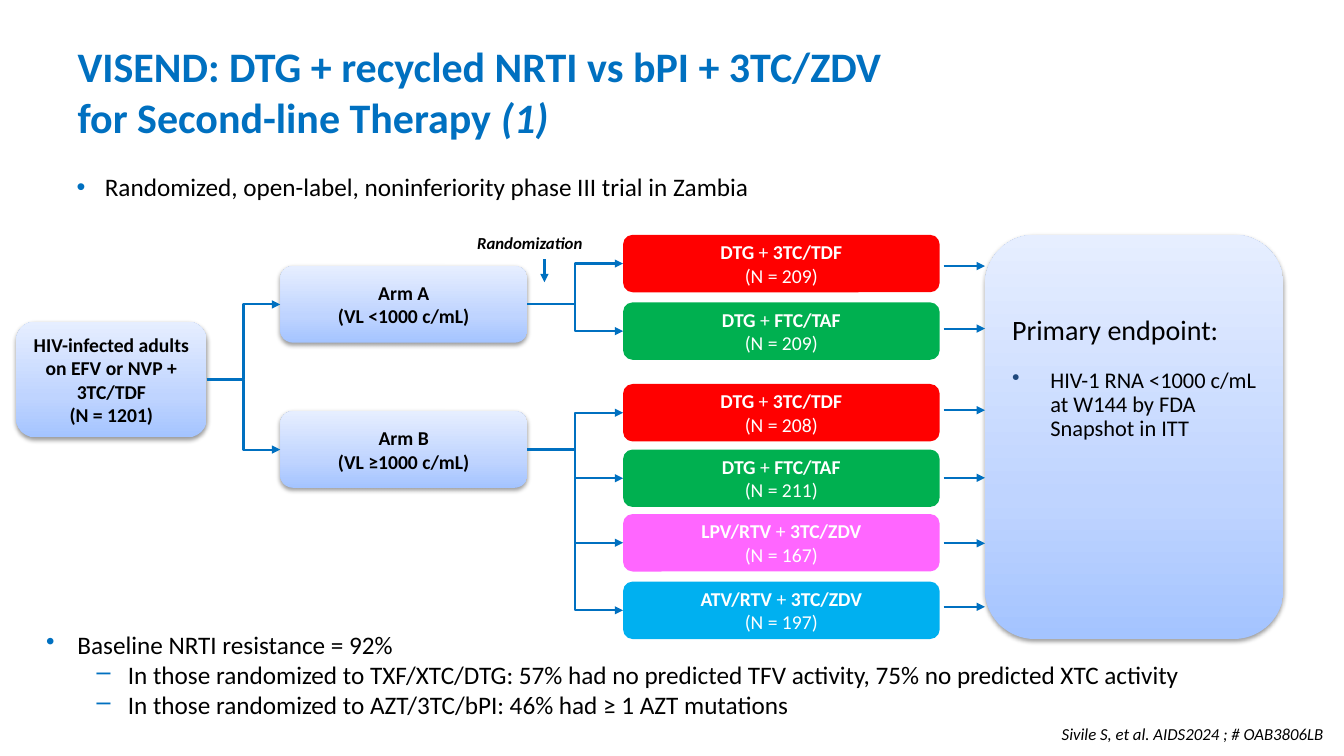
"""Build the VISEND trial design slide."""
import copy

import lxml.etree
import pptx
import pptx.dml.color
import pptx.enum.shapes
import pptx.enum.text
import pptx.oxml.ns
import pptx.util

RGBColor = pptx.dml.color.RGBColor
BLUE = RGBColor(0x00, 0x70, 0xC0)
NAVY = RGBColor(0x1F, 0x49, 0x7D)
BLACK = RGBColor(0x00, 0x00, 0x00)
WHITE = RGBColor(0xFF, 0xFF, 0xFF)
RED = RGBColor(0xFF, 0x00, 0x00)
GREEN = RGBColor(0x00, 0xB0, 0x50)
PINK = RGBColor(0xFF, 0x66, 0xFF)
SKY = RGBColor(0x00, 0xB0, 0xF0)
GRADIENT = [
    (0, RGBColor(0xA4, 0xC4, 0xFF)),
    (0.35, RGBColor(0xBF, 0xD4, 0xFF)),
    (1, RGBColor(0xE6, 0xEE, 0xFF)),
]
SCALE = 9144
LEFT = pptx.enum.text.PP_ALIGN.LEFT
CENTER = pptx.enum.text.PP_ALIGN.CENTER
RIGHT = pptx.enum.text.PP_ALIGN.RIGHT
TOP = pptx.enum.text.MSO_ANCHOR.TOP
MIDDLE = pptx.enum.text.MSO_ANCHOR.MIDDLE
ROUNDED = pptx.enum.shapes.MSO_SHAPE.ROUNDED_RECTANGLE
CONNECTORS = pptx.enum.shapes.MSO_CONNECTOR


def px(length):
    return pptx.util.Emu(length * SCALE)


def add_xml(parent, tag, **attributes):
    return lxml.etree.SubElement(parent, pptx.oxml.ns.qn(tag), attributes)


class TrialSlide:
    """Hold the slide and its style, and draw each kind of element."""

    def __init__(self, deck):
        self.page = deck.slides.add_slide(deck.slide_layouts[1])
        self.font = {"name": "Calibri", "bold": False, "italic": False}

    def set_text(self, box, paragraphs, size, color=BLACK, align=LEFT, anchor=TOP, **style):
        frame = box.text_frame
        settings = {
            "word_wrap": True,
            "auto_size": pptx.enum.text.MSO_AUTO_SIZE.NONE,
            "vertical_anchor": anchor,
        }
        for name, value in settings.items():
            setattr(frame, name, value)
        for index, content in enumerate(paragraphs):
            para = frame.add_paragraph() if index else frame.paragraphs[0]
            if "bullet" in content:
                self.bullet(para, *content["bullet"])
            layout = {"alignment": align, "space_before": pptx.util.Pt(0)}
            for name, value in (layout | content.get("layout", {})).items():
                setattr(para, name, value)
            for text, changes in content["runs"]:
                font = self.font | {"size": pptx.util.Pt(size)} | style | changes
                for number, line in enumerate(text.split("\n")):
                    if number:
                        para.add_line_break()
                    span = para.add_run()
                    span.text = line
                    for name, value in font.items():
                        setattr(span.font, name, value)
                    span.font.color.rgb = color

    def bullet(self, para, mark, color, margin, hanging):
        properties = para._p.get_or_add_pPr()
        properties.set("marL", str(px(margin)))
        properties.set("indent", str(-px(hanging)))
        add_xml(add_xml(properties, "a:buClr"), "a:srgbClr", val=str(color))
        add_xml(properties, "a:buChar", char=mark)

    def placeholder(self, index, place, paragraphs, size, **style):
        box = self.page.placeholders[index]
        for name, value in zip(("left", "top", "width", "height"), place):
            setattr(box, name, px(value))
        self.set_text(box, paragraphs, size, **style)

    def text_box(self, place, paragraphs, size, margins=None, **style):
        box = self.page.shapes.add_textbox(*map(px, place))
        for name, value in (margins or {}).items():
            setattr(box.text_frame, name, px(value))
        self.set_text(box, paragraphs, size, **style)

    def rounded_box(self, place):
        box = self.page.shapes.add_shape(ROUNDED, *map(px, place))
        box.shadow.inherit = False
        box.line.fill.background()
        return box

    def solid_box(self, place, color):
        box = self.rounded_box(place)
        box.fill.solid()
        box.fill.fore_color.rgb = color
        return box

    def gradient_box(self, place):
        box = self.rounded_box(place)
        box.fill.gradient()
        box.fill.gradient_angle = 90
        properties = box._element.spPr
        stops = properties.find(".//" + pptx.oxml.ns.qn("a:gsLst"))
        stops.append(copy.deepcopy(stops[-1]))
        for stop, (position, color) in zip(box.fill.gradient_stops, GRADIENT):
            stop.position = position
            stop.color.rgb = color
        effects = properties.find(pptx.oxml.ns.qn("a:effectLst"))
        shadow = add_xml(effects, "a:outerShdw", blurRad="40000", dist="20000",
                         dir="5400000", rotWithShape="0")
        shade = add_xml(shadow, "a:srgbClr", val=str(BLACK))
        add_xml(shade, "a:alpha", val="38000")
        return box

    def arrow(self, kind, *ends):
        connector = self.page.shapes.add_connector(kind, *ends)
        connector.line.color.rgb = BLUE
        connector.line.width = pptx.util.Pt(1.5)
        properties = connector._element.spPr
        add_xml(properties.find(pptx.oxml.ns.qn("a:ln")), "a:tailEnd", type="triangle")
        add_xml(properties, "a:effectLst")
        return connector

    def branch(self, source, target):
        connector = self.arrow(
            CONNECTORS.ELBOW,
            source.left + source.width, source.top + source.height // 2,
            target.left, target.top + target.height // 2,
        )
        connector.begin_connect(source, 3)
        connector.end_connect(target, 1)


def plain(*lines):
    return [{"runs": [(line, {})]} for line in lines]


def main():
    deck = pptx.Presentation()
    deck.slide_width, deck.slide_height = px(1333), px(750)
    slide = TrialSlide(deck)

    title = "VISEND: DTG + recycled NRTI vs bPI + 3TC/ZDV\nfor Second-line Therapy "
    slide.placeholder(0, (67, 28, 1246, 125),
                      [{"runs": [(title, {}), ("(1)", {"italic": True})]}],
                      30, color=BLUE, anchor=MIDDLE, bold=True)
    design = "Randomized, open-label, noninferiority phase III trial in Zambia"
    slide.placeholder(1, (66, 165, 1190, 37),
                      [{"runs": [(design, {})], "bullet": ("•", BLUE, 28, 28)}], 18)

    label = {"size": 14, "align": CENTER, "anchor": MIDDLE}
    population = slide.gradient_box((16, 319, 189, 115))
    slide.set_text(population, plain("HIV-infected adults on EFV or NVP + 3TC/TDF", "(N = 1201)"),
                   bold=True, **label)

    endpoint_left = 977
    slide.gradient_box((endpoint_left, 233, 296, 401))
    spacing = {"line_spacing": 0.9, "space_after": pptx.util.Pt(6)}
    endpoint = [
        {"runs": [("Primary endpoint:", {})], "layout": spacing},
        {"runs": [("HIV-1 RNA <1000 c/mL\nat W144 by FDA Snapshot in ITT",
                   {"size": pptx.util.Pt(16)})],
         "bullet": ("•", NAVY, 38, 38),
         "layout": spacing | {"space_before": pptx.util.Pt(10)}},
    ]
    slide.text_box((994, 309, 270, 135), endpoint, 20)

    arms = [
        ("Arm A", "(VL <1000 c/mL)", 264, [
            ("DTG", "3TC/TDF", 209, RED, 233, 264),
            ("DTG", "FTC/TAF", 209, GREEN, 300, 326),
        ]),
        ("Arm B", "(VL ≥1000 c/mL)", 408, [
            ("DTG", "3TC/TDF", 208, RED, 381, 407),
            ("DTG", "FTC/TAF", 211, GREEN, 446, 474),
            ("LPV/RTV", "3TC/ZDV", 167, PINK, 510, 539),
            ("ATV/RTV", "3TC/ZDV", 197, SKY, 577, 602),
        ]),
    ]
    bold = {"bold": True}
    for name, viral_load, arm_top, treatments in arms:
        arm = slide.gradient_box((278, arm_top, 245, 76))
        slide.set_text(arm, plain(name, viral_load), bold=True, **label)
        slide.branch(population, arm)
        for drug, backbone, count, color, top, arrow_y in treatments:
            treatment = slide.solid_box((618, top, 314, 57), color)
            regimen = [(f"{drug} ", bold), ("+", {}), (f" {backbone}", bold)]
            slide.set_text(treatment, [{"runs": regimen}] + plain(f"(N = {count})"),
                           color=WHITE, **label)
            slide.branch(arm, treatment)
            slide.arrow(CONNECTORS.STRAIGHT,
                        *map(px, (936, arrow_y, endpoint_left, arrow_y)))

    slide.text_box((434, 226, 183, 30), plain("Randomization"), 12,
                   align=CENTER, bold=True, italic=True)
    slide.arrow(CONNECTORS.STRAIGHT, *map(px, (540, 257, 540, 280)))

    resistance = [
        (0, "•", 31, "Baseline NRTI resistance = 92%"),
        (1, "–", 81, "In those randomized to TXF/XTC/DTG: 57% had no predicted TFV activity, "
                     "75% no predicted XTC activity"),
        (1, "–", 81, "In those randomized to AZT/3TC/bPI: 46% had ≥ 1 AZT mutations"),
    ]
    slide.text_box((36, 619, 1196, 101), [
        {"runs": [(text, {})], "bullet": (mark, BLUE, margin, 31), "layout": {"level": level}}
        for level, mark, margin, text in resistance
    ], 18)
    margins = {"margin_left": 8, "margin_top": 0, "margin_right": 8, "margin_bottom": 0}
    slide.text_box((1032, 718, 289, 20), plain("Sivile S, et al. AIDS2024 ; # OAB3806LB"),
                   12, margins=margins, align=RIGHT, italic=True)
    deck.save("out.pptx")


if __name__ == "__main__":
    main()
